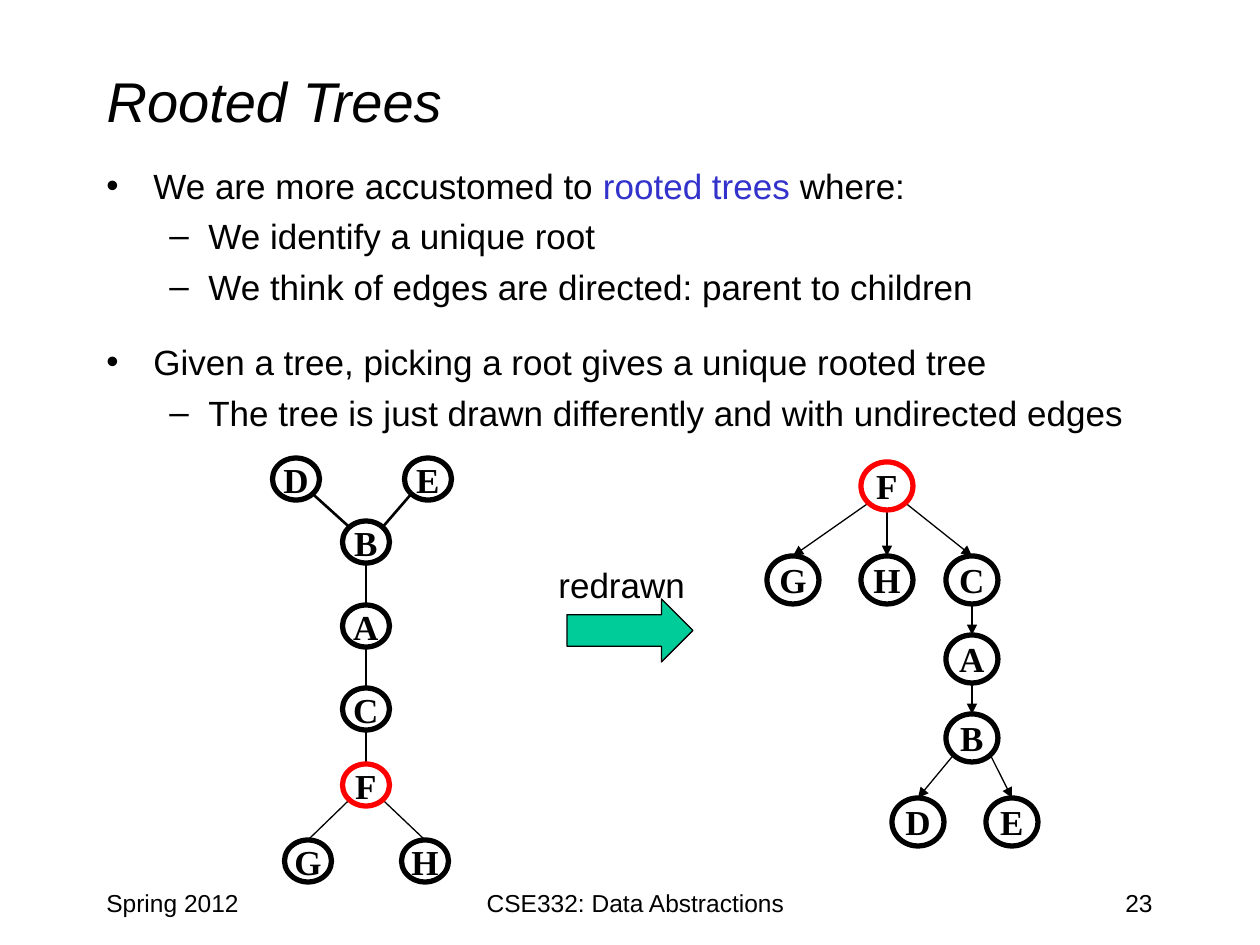
from dataclasses import dataclass
from math import sqrt

from lxml import etree
from pptx import Presentation
from pptx.dml.color import RGBColor
from pptx.enum.shapes import MSO_CONNECTOR, MSO_SHAPE
from pptx.enum.text import MSO_ANCHOR, MSO_AUTO_SIZE, PP_ALIGN
from pptx.oxml.ns import qn
from pptx.util import Pt

PX = 914400 / 126
LEFT, CENTER, RIGHT = PP_ALIGN.LEFT, PP_ALIGN.CENTER, PP_ALIGN.RIGHT
MIDDLE = MSO_ANCHOR.MIDDLE
OVAL, RIGHT_ARROW = MSO_SHAPE.OVAL, MSO_SHAPE.RIGHT_ARROW
STRAIGHT = MSO_CONNECTOR.STRAIGHT
SANS, SERIF = "Arial", "Times New Roman"
BLACK, RED, BLUE, GREEN = "000000", "FF0000", "3333CC", "00CC99"

# Unit offsets from a node's centre to its outline
DIAGONAL = sqrt(0.5)
ANCHORS = {
    "top": (0, -1), "bottom": (0, 1),
    "top left": (-DIAGONAL, -DIAGONAL), "top right": (DIAGONAL, -DIAGONAL),
    "bottom left": (-DIAGONAL, DIAGONAL), "bottom right": (DIAGONAL, DIAGONAL),
}


@dataclass(frozen=True)
class Edge:
    start: str
    start_anchor: str
    end: str
    end_anchor: str = "top"
    weight: float = 0.75


@dataclass(frozen=True)
class Tree:
    node_width: int
    node_height: int
    centers: dict[str, tuple[int, int]]
    edges: list[Edge]
    directed: bool


@dataclass(frozen=True)
class Bullet:
    level: int
    runs: list[tuple[str, str]]
    space_before: int = 5


TREES = [
    Tree(47, 42,
         {"D": (296, 479), "E": (428, 479), "B": (366, 542), "A": (366, 626),
          "C": (366, 709), "F": (366, 785), "G": (308, 861), "H": (425, 861)},
         [Edge("B", "top left", "D", "bottom right", 1.5),
          Edge("B", "top right", "E", "bottom left", 1.5),
          Edge("B", "bottom", "A"), Edge("A", "bottom", "C"),
          Edge("C", "bottom", "F"), Edge("F", "bottom left", "G"),
          Edge("F", "bottom right", "H")],
         directed=False),
    Tree(52, 48,
         {"F": (887, 486), "G": (793, 580), "H": (887, 580), "C": (972, 580),
          "A": (972, 659), "B": (972, 738), "D": (918, 822), "E": (1012, 822)},
         [Edge("F", "bottom left", "G"), Edge("F", "bottom", "H"),
          Edge("F", "bottom right", "C"), Edge("C", "bottom", "A"),
          Edge("A", "bottom", "B"), Edge("B", "bottom left", "D"),
          Edge("B", "bottom right", "E")],
         directed=True),
]

BULLETS = [
    Bullet(0, [("We are more accustomed to ", BLACK), ("rooted trees", BLUE), (" where:", BLACK)]),
    Bullet(1, [("We identify a unique root", BLACK)]),
    Bullet(1, [("We think of edges are directed: parent to children", BLACK)]),
    Bullet(0, [("Given a tree, picking a root gives a unique rooted tree", BLACK)], 19),
    Bullet(1, [("The tree is just drawn differently and with undirected edges", BLACK)]),
]
# Character, left margin and hanging indent for each level
BULLET_STYLES = [("•", 47, 47), ("–", 102, 39)]

FOOTERS = [
    ("Spring 2012", 94, 262, LEFT),
    ("CSE332: Data Abstractions", 399, 473, CENTER),
    ("23", 903, 262, RIGHT),
]


def emu(*lengths: float) -> list[int]:
    return [round(length * PX) for length in lengths]


def color(value: str) -> RGBColor:
    return RGBColor.from_string(value)


def add_run(paragraph, text: str, size: int, font: str = SANS, text_color: str = BLACK,
            bold: bool = False, italic: bool = False) -> None:
    run = paragraph.add_run()
    run.text = text
    run.font.name = font
    run.font.size = Pt(size)
    run.font.bold = bold
    run.font.italic = italic
    run.font.color.rgb = color(text_color)


def add_text_box(slide, x: int, y: int, width: int, height: int, wrap: bool = True):
    frame = slide.shapes.add_textbox(*emu(x, y, width, height)).text_frame
    frame.word_wrap = wrap
    return frame


def add_title(slide, text: str) -> None:
    title = slide.shapes.title
    title.left, title.top, title.width, title.height = emu(94, 21, 1072, 158)
    frame = title.text_frame
    frame.auto_size = MSO_AUTO_SIZE.NONE
    frame.vertical_anchor = MIDDLE
    paragraph = frame.paragraphs[0]
    paragraph.alignment = LEFT
    add_run(paragraph, text, 32, italic=True)


def add_bullets(slide, bullets: list[Bullet]) -> None:
    frame = add_text_box(slide, 94, 158, 1072, 315)
    for index, bullet in enumerate(bullets):
        paragraph = frame.add_paragraph() if index else frame.paragraphs[0]
        paragraph.level = bullet.level
        paragraph.space_before = Pt(bullet.space_before)
        character, margin, hanging = BULLET_STYLES[bullet.level]
        properties = paragraph._p.get_or_add_pPr()
        properties.set("marL", str(emu(margin)[0]))
        properties.set("indent", str(emu(-hanging)[0]))
        etree.SubElement(properties, qn("a:buFont"), typeface=SANS)
        etree.SubElement(properties, qn("a:buChar"), char=character)
        for text, text_color in bullet.runs:
            add_run(paragraph, text, 20, text_color=text_color)


def add_node(slide, label: str, tree: Tree) -> None:
    x, y = tree.centers[label]
    width, height = tree.node_width, tree.node_height
    node = slide.shapes.add_shape(OVAL, *emu(x - width / 2, y - height / 2, width, height))
    node.shadow.inherit = False
    node.fill.background()
    node.line.color.rgb = color(RED if label == "F" else BLACK)
    node.line.width = Pt(3)
    frame = node.text_frame
    frame.word_wrap = False
    frame.vertical_anchor = MIDDLE
    paragraph = frame.paragraphs[0]
    paragraph.alignment = CENTER
    add_run(paragraph, label, 20, SERIF, bold=True)


def anchor_point(tree: Tree, label: str, anchor: str) -> list[int]:
    x, y = tree.centers[label]
    across, down = ANCHORS[anchor]
    return emu(x + across * tree.node_width / 2, y + down * tree.node_height / 2)


def add_edge(slide, edge: Edge, tree: Tree) -> None:
    start = anchor_point(tree, edge.start, edge.start_anchor)
    end = anchor_point(tree, edge.end, edge.end_anchor)
    connector = slide.shapes.add_connector(STRAIGHT, *start, *end)
    connector.line.color.rgb = color(BLACK)
    connector.line.width = Pt(edge.weight)
    if tree.directed:
        etree.SubElement(connector.line._get_or_add_ln(), qn("a:tailEnd"), type="triangle")
    etree.SubElement(connector._element.spPr, qn("a:effectLst"))


def add_redrawn_arrow(slide) -> None:
    arrow = slide.shapes.add_shape(RIGHT_ARROW, *emu(567, 599, 126, 63))
    arrow.shadow.inherit = False
    arrow.fill.solid()
    arrow.fill.fore_color.rgb = color(GREEN)
    arrow.line.color.rgb = color(BLACK)
    arrow.line.width = Pt(0.75)
    frame = add_text_box(slide, 546, 557, 154, 55, wrap=False)
    add_run(frame.paragraphs[0], "redrawn", 20)


def main() -> None:
    presentation = Presentation()
    presentation.slide_width, presentation.slide_height = emu(1260, 945)
    slide = presentation.slides.add_slide(presentation.slide_layouts[5])
    add_title(slide, "Rooted Trees")
    add_bullets(slide, BULLETS)
    for text, x, width, alignment in FOOTERS:
        paragraph = add_text_box(slide, x, 882, width, 63).paragraphs[0]
        paragraph.alignment = alignment
        add_run(paragraph, text, 14)
    for tree in TREES:
        for edge in tree.edges:
            add_edge(slide, edge, tree)
        for label in tree.centers:
            add_node(slide, label, tree)
    add_redrawn_arrow(slide)
    presentation.save("out.pptx")


if __name__ == "__main__":
    main()
